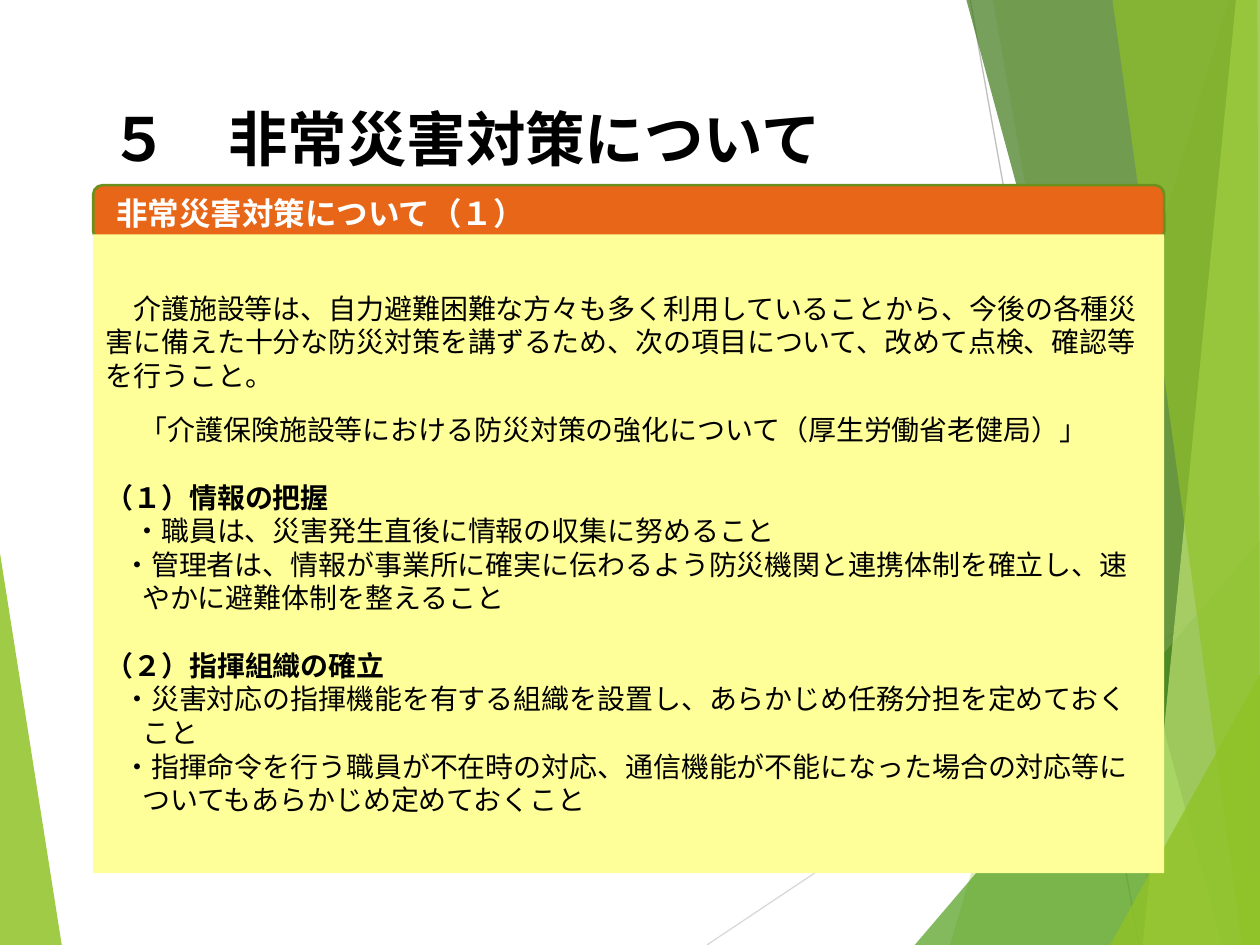
from dataclasses import dataclass

from lxml.etree import SubElement
from pptx import Presentation
from pptx.dml.color import RGBColor
from pptx.enum.shapes import MSO_CONNECTOR as Connector, MSO_SHAPE as Shape
from pptx.enum.text import MSO_ANCHOR as Anchor, PP_ALIGN as Align
from pptx.oxml.ns import qn
from pptx.util import Inches, Pt


@dataclass(frozen=True)
class Theme:
    green: str = "90C226"
    leaf: str = "54A021"
    forest: str = "3F7819"
    lime: str = "C0E474"
    border: str = "6B901C"
    orange: str = "E76618"
    cream: str = "FFFF99"
    black: str = "000000"
    white: str = "FFFFFF"
    light_gray: str = "D9D9D9"
    gray: str = "BFBFBF"
    font: str = "Roboto"
    intro_font: str = "Arial"
    title_size: int = 34
    header_size: int = 18
    body_size: int = 16


THEME = Theme()
FULL_WIDTH, BULLET, HANGING = 0.22, 0.14, 0.29
BLANK_LINE = 19.3

FACETS_BEHIND = [
    ([(0, 4.39), (0.49, 7.5), (0, 7.5)], THEME.green, 85),
]
FACETS = [
    ([(9.75, 0), (7.54, 7.5), (10, 7.5), (10, 0)], THEME.green, 30),
    ([(7.88, 0), (9.19, 7.5), (10, 7.5), (10, 0)], THEME.green, 20),
    ([(7.26, 7.5), (10, 4.29), (10, 7.5)], THEME.leaf, 72),
    ([(7.67, 0), (9.7, 7.5), (10, 7.5), (10, 0)], THEME.forest, 70),
    ([(9.81, 0), (9.07, 7.5), (10, 7.5), (10, 0)], THEME.lime, 70),
    ([(8.83, 0), (9.86, 7.5), (10, 7.5), (9.98, 0)], THEME.green, 65),
    ([(8.81, 7.5), (10, 5.35), (10, 7.5)], THEME.green, 80),
]

BODY = [
    ("介護施設等は、自力避難困難な方々も多く利用していることから、今後の各種災 害に備えた十分な防災対策を講ずるため、次の項目について、改めて点検、確認等を行うこと。",
     dict(first=FULL_WIDTH, after=12, font=THEME.intro_font)),
    ("「介護保険施設等における防災対策の強化について（厚生労働省老健局）」",
     dict(left=0.27, font=THEME.intro_font)),
    ("（１）情報の把握", dict(bold=True, before=BLANK_LINE)),
    ("・職員は、災害発生直後に情報の収集に努めること", dict(left=FULL_WIDTH)),
    ("・管理者は、情報が事業所に確実に伝わるよう防災機関と連携体制を確立し、速", dict(left=BULLET)),
    ("やかに避難体制を整えること", dict(left=HANGING)),
    ("（２）指揮組織の確立", dict(bold=True, before=BLANK_LINE, font=THEME.intro_font)),
    ("・災害対応の指揮機能を有する組織を設置し、あらかじめ任務分担を定めておく", dict(left=BULLET)),
    ("こと", dict(left=HANGING)),
    ("・指揮命令を行う職員が不在時の対応、通信機能が不能になった場合の対応等に", dict(left=BULLET)),
    ("ついてもあらかじめ定めておくこと", dict(left=HANGING)),
]


class SlideBuilder:
    def __init__(self, slide, theme):
        self.slide = slide
        self.theme = theme

    def facet(self, points, color, opacity):
        corners = [(Inches(x), Inches(y)) for x, y in points]
        builder = self.slide.shapes.build_freeform(*corners[0])
        builder.add_line_segments(corners[1:], close=True)
        shape = builder.convert_to_shape()
        self.paint(shape, color)
        color_element = shape._element.spPr.find(qn("a:solidFill"))[0]
        SubElement(color_element, qn("a:alpha"), val=str(opacity * 1000))

    def line(self, start, end, color):
        points = [Inches(value) for value in (*start, *end)]
        connector = self.slide.shapes.add_connector(Connector.STRAIGHT, *points)
        connector.line.color.rgb = RGBColor.from_string(color)
        connector.line.width = Pt(0.75)
        SubElement(connector._element.spPr, qn("a:effectLst"))

    def paint(self, shape, fill, border=None):
        shape.shadow.inherit = False
        shape.fill.solid()
        shape.fill.fore_color.rgb = RGBColor.from_string(fill)
        if border:
            shape.line.color.rgb = RGBColor.from_string(border)
            shape.line.width = Pt(1.5)
        else:
            shape.line.fill.background()

    def panel(self, kind, box, fill, border=None):
        shape = self.slide.shapes.add_shape(kind, *map(Inches, box))
        self.paint(shape, fill, border)
        shape.text_frame.word_wrap = True
        shape.text_frame.vertical_anchor = Anchor.MIDDLE
        return shape

    def set_text(self, paragraph, text, size, color, bold=False, font=None,
                 left=0, first=0, before=0, after=0):
        paragraph.text = text
        paragraph.alignment = Align.LEFT
        paragraph.space_before = Pt(before)
        paragraph.space_after = Pt(after)
        properties = paragraph._p.get_or_add_pPr()
        properties.set("marL", str(Inches(left)))
        properties.set("indent", str(Inches(first)))
        paragraph.font.name = font or self.theme.font
        paragraph.font.size = Pt(size)
        paragraph.font.bold = bold
        paragraph.font.color.rgb = RGBColor.from_string(color)

    def title(self, text, box):
        shape = self.slide.shapes.title
        shape.left, shape.top, shape.width, shape.height = map(Inches, box)
        shape.text_frame.vertical_anchor = Anchor.TOP
        self.set_text(shape.text_frame.paragraphs[0], text,
                      self.theme.title_size, self.theme.black, bold=True)

    def header(self, text, box):
        shape = self.panel(Shape.ROUNDED_RECTANGLE, box, self.theme.orange, self.theme.border)
        shape.text_frame.margin_left = Inches(0.16)
        self.set_text(shape.text_frame.paragraphs[0], text,
                      self.theme.header_size, self.theme.white, bold=True)

    def body(self, items, box):
        frame = self.panel(Shape.RECTANGLE, box, self.theme.cream).text_frame
        for index, (text, style) in enumerate(items):
            paragraph = frame.add_paragraph() if index else frame.paragraphs[0]
            self.set_text(paragraph, text, self.theme.body_size, self.theme.black, **style)


def main():
    presentation = Presentation()
    presentation.slide_width = Inches(10)
    presentation.slide_height = Inches(7.5)
    slide = presentation.slides.add_slide(presentation.slide_layouts[5])
    builder = SlideBuilder(slide, THEME)
    for facet in FACETS_BEHIND:
        builder.facet(*facet)
    builder.line((5.61, 7.5), (10, 4.57), THEME.light_gray)
    builder.line((7.7, 0), (9.04, 7.5), THEME.gray)
    for facet in FACETS:
        builder.facet(*facet)
    builder.header("非常災害対策について（１）", (0.74, 1.47, 8.5, 0.44))
    builder.body(BODY, (0.74, 1.86, 8.5, 5.07))
    builder.title("５　非常災害対策について", (0.77, 0.76, 8.75, 0.85))
    presentation.save("out.pptx")


if __name__ == "__main__":
    main()
